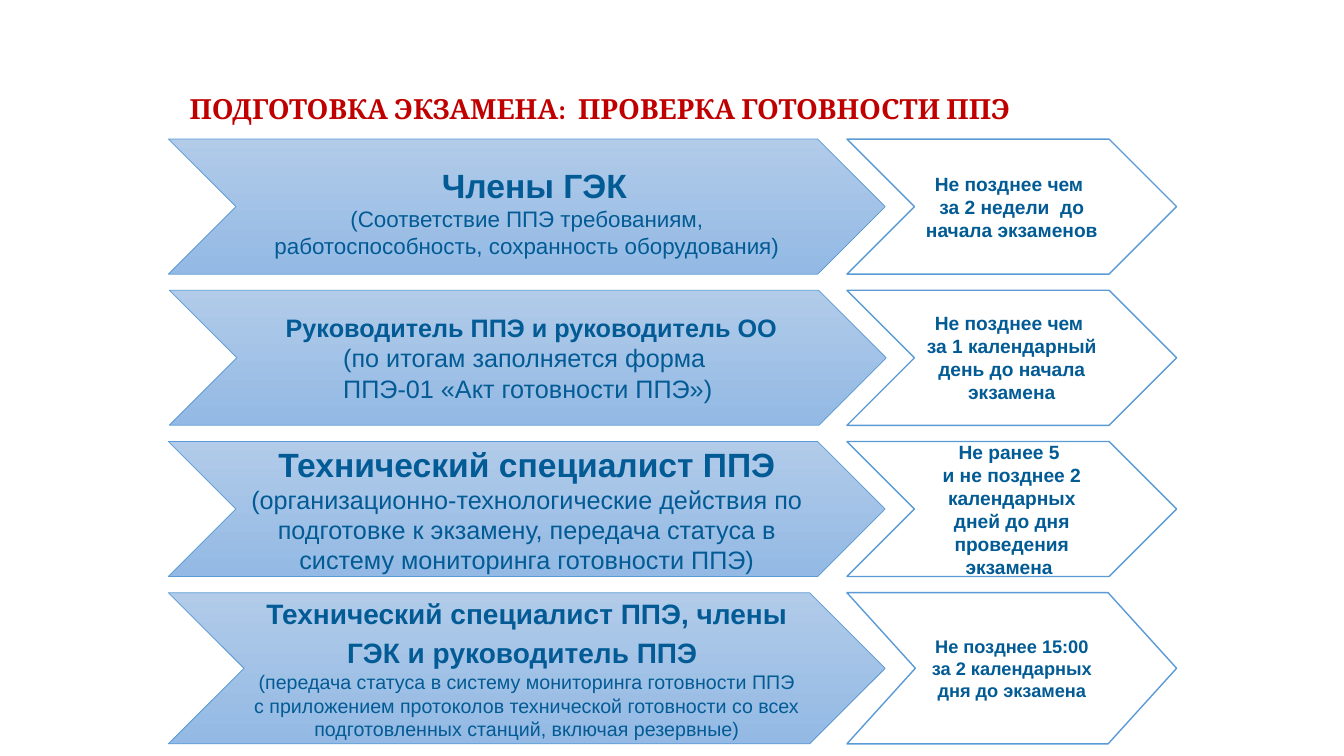
from pptx import Presentation
from pptx.dml.color import RGBColor
from pptx.enum.shapes import MSO_SHAPE
from pptx.enum.text import MSO_ANCHOR, MSO_AUTO_SIZE, PP_ALIGN
from pptx.util import Inches, Pt

COLORS = {
    "title": "C00000",
    "text": "025B94",
    "outline": "5B9BD5",
    "gradient_top": "B1CBE9",
    "gradient_bottom": "93B9E4",
    "deadline": "FFFFFF",
}

# Stage grid, in inches
LEFT, TOP, PITCH = 1.67, 1.38, 1.5
DUTY_WIDTH = 7.11
DEADLINE_LEFT, DEADLINE_WIDTH = 8.4, 3.27

# Each paragraph: its runs as (text, size, bold), then its paragraph format
STAGES = [
    {
        "duty": [
            ([("Члены ГЭК", 24, True)],
             {"line_spacing": Pt(36.8)}, 0.15),
            ([("(Соответствие ППЭ требованиям, работоспособность, "
               "сохранность оборудования)", 16, False)], {}, 0),
        ],
        "deadline": "Не позднее чем \nза 2 недели  до начала экзаменов ",
    },
    {
        "duty": [
            ([("Руководитель ППЭ и руководитель ОО", 18, True)], {}, 0.07),
            ([("(по итогам заполняется форма \n"
               "ППЭ-01 «Акт готовности ППЭ»)", 18, False)], {}, 0),
        ],
        "deadline": "Не позднее чем \nза 1 календарный день до начала экзамена",
        "shift": 0.01,
    },
    {
        "duty": [
            ([("Технический специалист ППЭ ", 24, True),
              ("(организационно-технологические действия по подготовке к "
               "экзамену, передача статуса в систему мониторинга "
               "готовности ППЭ)", 18, False)], {}, 0),
        ],
        "deadline": "Не ранее 5 \nи не позднее 2 календарных дней до дня "
                    "проведения экзамена ",
    },
    {
        "duty": [
            ([("Технический специалист ППЭ, члены ГЭК и руководитель ППЭ",
               20, True), (" ", 24, True)], {}, 0),
            ([("(передача статуса в систему мониторинга готовности ППЭ "
               "с приложением протоколов технической готовности со всех "
               "подготовленных станций, включая резервные)", 14, False)],
             {}, 0),
        ],
        "deadline": "Не позднее 15:00 за 2 календарных дня до экзамена",
        "deadline_size": 13,
        "deadline_point": 0.453,
        "height": 1.5,
    },
]


def rgb(name):
    return RGBColor.from_string(COLORS[name])


def apply(target, formats):
    for attribute, value in formats.items():
        setattr(target, attribute, value)


def add_run(paragraph, text, size, bold, font="Arial", color="text"):
    """Add formatted text, turning each newline into a line break."""
    for number, line in enumerate(text.split("\n")):
        if number:
            paragraph.add_line_break()
        run = paragraph.add_run()
        run.text = line
        apply(run.font, {"name": font, "size": Pt(size), "bold": bold})
        run.font.color.rgb = rgb(color)


def place_title(slide, left, top, width, height):
    title = slide.shapes.title
    apply(title, {"left": Inches(left), "top": Inches(top),
                  "width": Inches(width), "height": Inches(height)})
    apply(title.text_frame, {"vertical_anchor": MSO_ANCHOR.MIDDLE,
                             "word_wrap": True,
                             "auto_size": MSO_AUTO_SIZE.NONE})
    heading = title.text_frame.paragraphs[0]
    apply(heading, {"alignment": PP_ALIGN.LEFT, "line_spacing": 0.9})
    add_run(heading, "ПОДГОТОВКА ЭКЗАМЕНА:  ПРОВЕРКА ГОТОВНОСТИ ППЭ",
            19.8, True, "Cambria", "title")


def add_chevron(slide, left, top, width, height, line_width, paragraphs):
    chevron = slide.shapes.add_shape(
        MSO_SHAPE.CHEVRON, Inches(left), Inches(top),
        Inches(width), Inches(height))
    chevron.shadow.inherit = False
    chevron.line.color.rgb = rgb("outline")
    chevron.line.width = Pt(line_width)
    frame = chevron.text_frame
    apply(frame, {"word_wrap": True, "vertical_anchor": MSO_ANCHOR.MIDDLE})
    for number, (runs, formats, indent) in enumerate(paragraphs):
        paragraph = frame.add_paragraph() if number else frame.paragraphs[0]
        apply(paragraph, {"alignment": PP_ALIGN.CENTER, **formats})
        if indent:
            paragraph._p.get_or_add_pPr().set("marL", str(Inches(indent)))
        for run in runs:
            add_run(paragraph, *run)
    return chevron


def add_stage(slide, left, top, stage):
    height = stage.get("height", 1.34)

    # Who checks, and what
    duty = add_chevron(slide, left + stage.get("shift", 0), top,
                       DUTY_WIDTH, height, 0.5, stage["duty"])
    duty.fill.gradient()
    duty.fill.gradient_angle = 270
    for stop, name in zip(duty.fill.gradient_stops,
                          ("gradient_top", "gradient_bottom")):
        stop.color.rgb = rgb(name)

    # By when
    size = stage.get("deadline_size", 13.7)
    deadline = add_chevron(slide, DEADLINE_LEFT, top, DEADLINE_WIDTH, height,
                           1, [([(stage["deadline"], size, True)], {}, 0)])
    deadline.adjustments[0] = stage.get("deadline_point", 0.5)
    deadline.fill.solid()
    deadline.fill.fore_color.rgb = rgb("deadline")


def main():
    presentation = Presentation()
    presentation.slide_width = Inches(13.33)
    presentation.slide_height = Inches(7.5)
    slide = presentation.slides.add_slide(presentation.slide_layouts[5])
    place_title(slide, 1.78, 0.96, 9.5, 0.27)
    for number, stage in enumerate(STAGES):
        add_stage(slide, LEFT, TOP + number * PITCH, stage)
    presentation.save("out.pptx")


if __name__ == "__main__":
    main()
